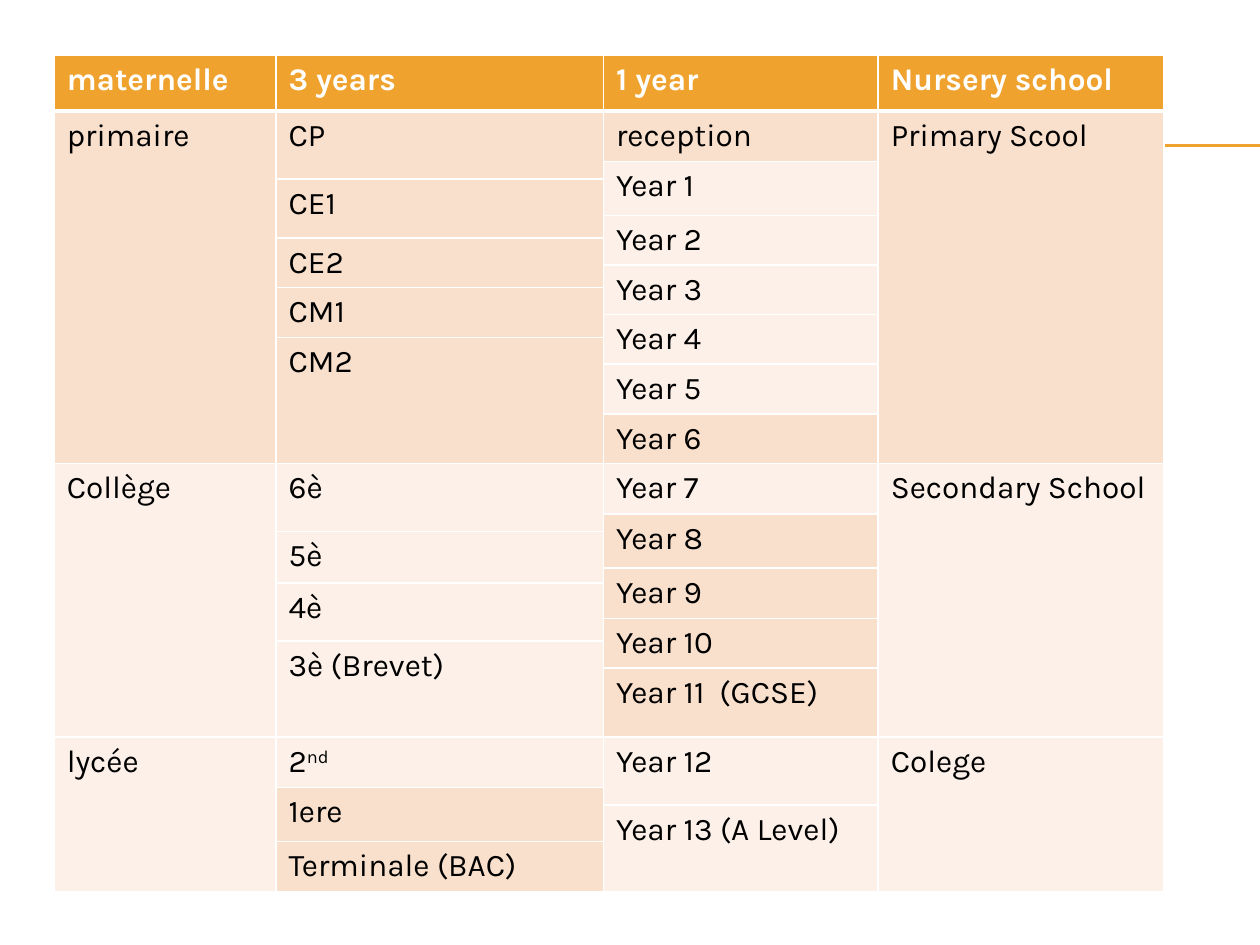
"""Build a slide comparing the French and English school years."""
import lxml.etree
import pptx
import pptx.dml.color
import pptx.enum.shapes
import pptx.oxml.ns
import pptx.util

Inches = pptx.util.Inches
qn = pptx.oxml.ns.qn


def rgb(hex_code):
    return pptx.dml.color.RGBColor.from_string(hex_code)


def add_border(cell, side, points):
    edge = lxml.etree.SubElement(
        cell._tc.get_or_add_tcPr(), qn(f"a:ln{side}"), w=str(pptx.util.Pt(points))
    )
    paint = lxml.etree.SubElement(edge, qn("a:solidFill"))
    lxml.etree.SubElement(paint, qn("a:srgbClr"), val="FFFFFF")


ORANGE, PEACH, CREAM = "F0A22E", "F9E0CD", "FCF0E8"

deck = pptx.Presentation()
deck.slide_width, deck.slide_height = Inches(10), Inches(7.5)
slide = deck.slides.add_slide(deck.slide_layouts[6])

for rule_y in (1.15, 1.16):
    rule = slide.shapes.add_connector(
        pptx.enum.shapes.MSO_CONNECTOR.STRAIGHT,
        Inches(0.56), Inches(rule_y), Inches(10), Inches(rule_y),
    )
    rule.line.color.rgb = rgb(ORANGE)
    rule.line.width = pptx.util.Pt(0.75)
    lxml.etree.SubElement(rule._element.spPr, qn("a:effectLst"))

column_widths = [1.76, 2.6, 2.18, 2.27]
row_heights = [
    0.44, 0.4, 0.14, 0.29, 0.18, 0.21, 0.18, 0.21, 0.18, 0.21, 0.39, 0.39,
    0.4, 0.14, 0.29, 0.12, 0.28, 0.18, 0.21, 0.55, 0.4, 0.14, 0.29, 0.39,
]
school_columns = [
    [("maternelle", 1, ORANGE), ("primaire", 11, PEACH),
     ("Collège", 8, CREAM), ("lycée", 4, CREAM)],
    [("3 years", 1, ORANGE), ("CP", 2, PEACH), ("CE1", 2, PEACH),
     ("CE2", 2, PEACH), ("CM1", 2, PEACH), ("CM2", 3, PEACH),
     ("6è", 2, CREAM), ("5è", 2, CREAM), ("4è", 2, CREAM),
     ("3è (Brevet)", 2, CREAM), ("2^nd", 1, CREAM), ("1ere", 2, PEACH),
     ("Terminale (BAC)", 1, PEACH)],
    [("1 year", 1, ORANGE), ("reception", 1, PEACH), ("Year 1", 2, CREAM),
     ("Year 2", 2, CREAM), ("Year 3", 2, CREAM), ("Year 4", 2, CREAM),
     ("Year 5", 1, CREAM), ("Year 6", 1, PEACH), ("Year 7", 1, CREAM),
     ("Year 8", 2, PEACH), ("Year 9", 2, PEACH), ("Year 10", 2, PEACH),
     ("Year 11  (GCSE)", 1, PEACH), ("Year 12", 2, CREAM),
     ("Year 13 (A Level)", 2, CREAM)],
    [("Nursery school", 1, ORANGE), ("Primary Scool", 11, PEACH),
     ("Secondary School", 8, CREAM), ("Colege", 4, CREAM)],
]

school_years = slide.shapes.add_table(
    len(row_heights), len(column_widths), Inches(0.43), Inches(0.44),
    Inches(sum(column_widths)), Inches(sum(row_heights)),
).table
school_years.horz_banding = False
for column, width in zip(school_years.columns, column_widths):
    column.width = Inches(width)
for row, height in zip(school_years.rows, row_heights):
    row.height = Inches(height)

for column_index, stages in enumerate(school_columns):
    top = 0
    for wording, span, fill in stages:
        is_header = top == 0
        for row_index in range(top, top + span):
            cell = school_years.cell(row_index, column_index)
            for side in "LRTB":
                thick = (is_header and side == "B") or (row_index == 1 and side == "T")
                add_border(cell, side, 3 if thick else 1)
            cell.fill.solid()
            cell.fill.fore_color.rgb = rgb(fill)
        stage = school_years.cell(top, column_index)
        if span > 1:
            stage.merge(school_years.cell(top + span - 1, column_index))

        text_format = {"name": "Karla", "size": pptx.util.Pt(18), "bold": is_header}
        base, _, superscript = wording.partition("^")
        for part in filter(None, (base, superscript)):
            run = stage.text_frame.paragraphs[0].add_run()
            run.text = part
            for attribute, value in text_format.items():
                setattr(run.font, attribute, value)
            run.font.color.rgb = rgb("FFFFFF" if is_header else "000000")
        if superscript:
            run.font._element.set("baseline", "30000")
        top += span

deck.save("out.pptx")
